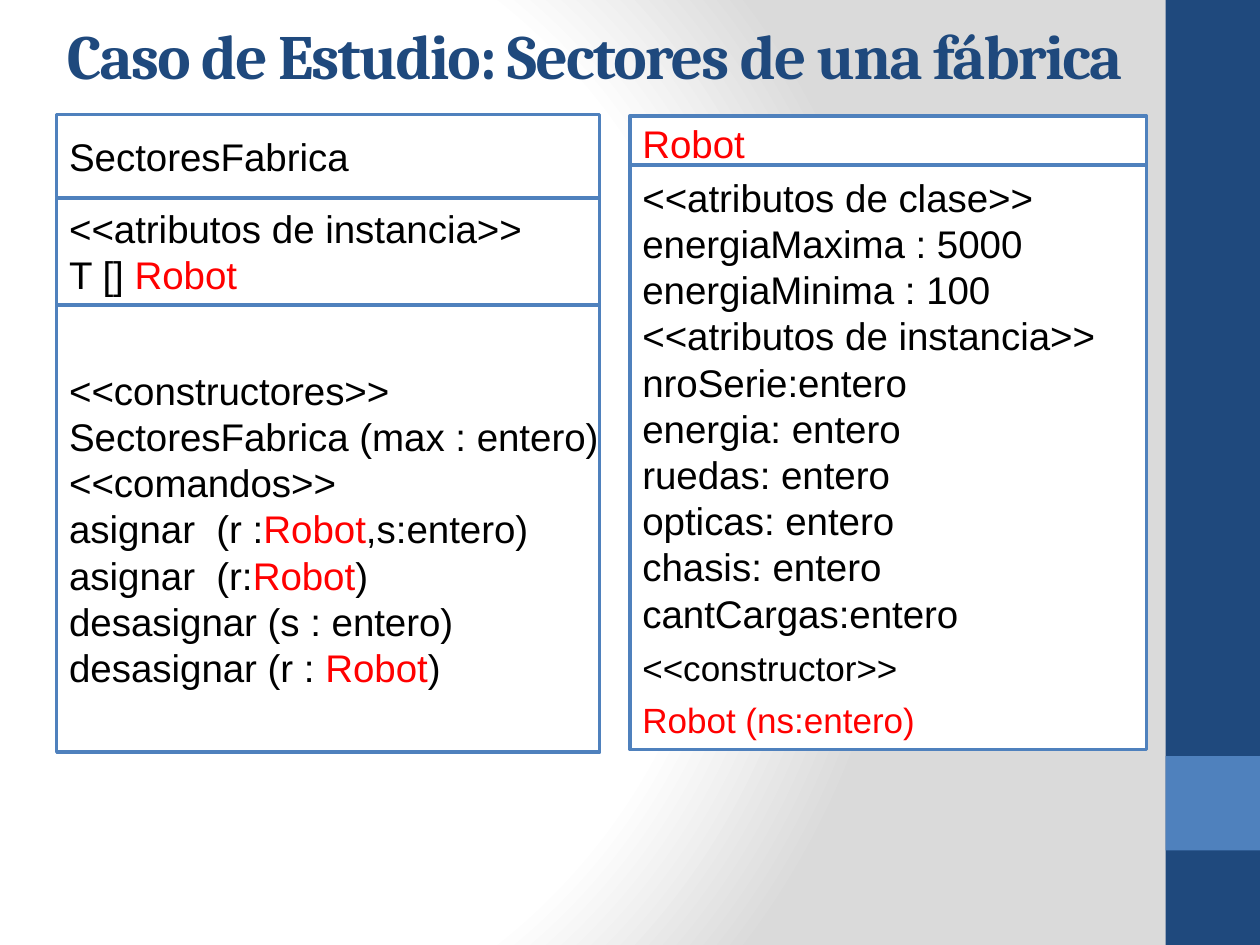
from pptx import Presentation
from pptx.dml.color import RGBColor
from pptx.enum.shapes import MSO_SHAPE as Shape
from pptx.enum.text import MSO_ANCHOR as Anchor, MSO_AUTO_SIZE as AutoSize, PP_ALIGN as Align
from pptx.oxml import parse_xml
from pptx.oxml.ns import nsdecls
from pptx.util import Inches, Pt

COLORS = {
    "navy": "1F497D",
    "blue": "4F81BD",
    "white": "FFFFFF",
    "gray": "DADADA",
    "black": "000000",
    "red": "FF0000",
}

deck = Presentation()
deck.slide_width, deck.slide_height = Inches(10), Inches(7.5)
COL, ROW = deck.slide_width / 100, deck.slide_height / 75
slide = deck.slides.add_slide(deck.slide_layouts[5])


def rgb(name):
    return RGBColor.from_string(COLORS[name])


def add_box(left, top, width, height, fill, border=None):
    box = slide.shapes.add_shape(
        Shape.RECTANGLE, int(left * COL), int(top * ROW), int(width * COL), int(height * ROW)
    )
    box.shadow.inherit = False
    box.fill.solid()
    box.fill.fore_color.rgb = rgb(fill)
    if border:
        box.line.color.rgb = rgb(border)
        box.line.width = Pt(2)
    else:
        box.line.fill.background()
    return box


stops = "".join(
    f'<a:gs pos="{share * 1000}"><a:srgbClr val="{COLORS[name]}"/></a:gs>'
    for share, name in [(0, "white"), (75, "white"), (100, "gray")]
)
backdrop = parse_xml(
    f'<p:bg {nsdecls("p", "a")}><p:bgPr><a:gradFill rotWithShape="1"><a:gsLst>{stops}</a:gsLst>'
    '<a:path path="circle"><a:fillToRect l="20000" t="50000" r="100000" b="50000"/></a:path>'
    "</a:gradFill><a:effectLst/></p:bgPr></p:bg>"
)
slide.element.cSld.insert(0, backdrop)

add_box(92.5, 0, 7.5, 75, "navy")
add_box(92.5, 60, 7.5, 7.5, "blue")

FACTORY = (4.5, 43.1, False)
ROBOT = (50, 41, True)
compartments = [
    (FACTORY, 9.1, 6.6, ["SectoresFabrica"]),
    (FACTORY, 15.7, 8.5, ["<<atributos de instancia>>", "T [] |Robot"]),
    (ROBOT, 9.2, 4.3, ["|Robot"]),
    (ROBOT, 13.1, 46.4, [
        "<<atributos de clase>>",
        "energiaMaxima : 5000",
        "energiaMinima : 100",
        "<<atributos de instancia>>",
        "nroSerie:entero",
        "energia: entero",
        "ruedas: entero",
        "opticas: entero",
        "chasis: entero",
        "cantCargas:entero",
        "<<constructor>>",
        "|Robot (ns:entero)",
    ]),
    (FACTORY, 24.2, 35.5, [
        "<<constructores>>",
        "SectoresFabrica (max : entero)",
        "<<comandos>>",
        "asignar  (r :|Robot|,s:entero)",
        "asignar  (r:|Robot|)",
        "desasignar (s : entero)",
        "desasignar (r : |Robot|)",
    ]),
]

for (left, width, wraps), top, height, members in compartments:
    frame = add_box(left, top, width, height, "white", "blue").text_frame
    frame.word_wrap = wraps
    frame.vertical_anchor = Anchor.MIDDLE
    for index, member in enumerate(members):
        line = frame.paragraphs[0] if index == 0 else frame.add_paragraph()
        line.alignment = Align.LEFT
        is_constructor = member in ("<<constructor>>", "|Robot (ns:entero)")
        if is_constructor:
            line.space_before = Pt(6)
        for part, words in enumerate(member.split("|")):
            if words:
                run = line.add_run()
                run.text = words
                run.font.name = "Arial"
                run.font.size = Pt(20 if is_constructor else 22)
                run.font.color.rgb = rgb("red" if part % 2 else "black")

heading = slide.shapes.title
heading.left, heading.top = int(4.3 * COL), int(0.5 * ROW)
heading.width, heading.height = int(91.4 * COL), int(7.6 * ROW)
heading.text_frame.text = "Caso de Estudio: Sectores de una fábrica"
heading.text_frame.word_wrap = True
heading.text_frame.auto_size = AutoSize.NONE
heading.text_frame.vertical_anchor = Anchor.MIDDLE
heading_line = heading.text_frame.paragraphs[0]
heading_line.alignment = Align.LEFT
heading_run = heading_line.runs[0]
heading_run.font.name = "Cambria"
heading_run.font.size = Pt(36)
heading_run.font.bold = True
heading_run.font.color.rgb = rgb("navy")
heading_run.font._element.set("spc", "-100")

deck.save("out.pptx")
